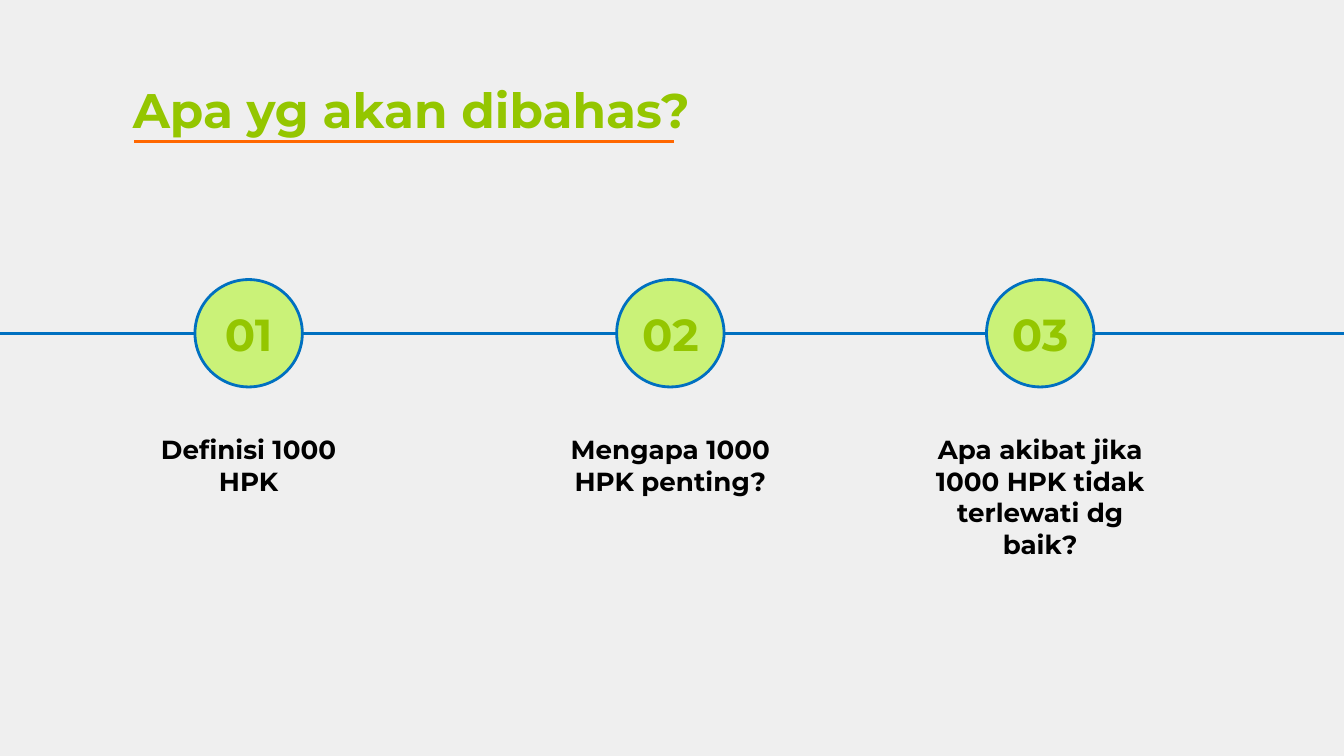
from dataclasses import dataclass

from lxml import etree
from pptx import Presentation
from pptx import util as u
from pptx.dml.color import RGBColor
from pptx.enum import shapes, text
from pptx.oxml.ns import qn


@dataclass(frozen=True)
class Theme:
    font: str = "Montserrat"
    background: str = "EFEFEF"
    accent: str = "94C600"
    badge: str = "CAF278"
    timeline: str = "0070C0"
    underline: str = "FF6700"
    body: str = "000000"
    title_size: int = 26
    number_size: int = 24
    topic_size: int = 14
    line_width: float = 1.5


THEME = Theme()
PAGE_WIDTH, PAGE_HEIGHT = 25.4, 14.29
TIMELINE_Y = 6.3
BADGE_SIZE = 2.03
COLUMN_WIDTH = 4.7

# Centre of each column in cm, with its topic
TOPICS = [
    (4.7, "Definisi 1000 HPK"),
    (12.67, "Mengapa 1000 HPK penting?"),
    (19.66, "Apa akibat jika 1000 HPK tidak terlewati dg baik?"),
]


def color(value):
    return RGBColor.from_string(value)


def add_line(page, left, right, top, line_color):
    line = page.shapes.add_connector(
        shapes.MSO_CONNECTOR.STRAIGHT,
        u.Cm(left), u.Cm(top), u.Cm(right), u.Cm(top))
    line.line.color.rgb = color(line_color)
    line.line.width = u.Pt(THEME.line_width)
    etree.SubElement(line._element.spPr, qn("a:effectLst"))


def add_badge(page, center):
    badge = page.shapes.add_shape(
        shapes.MSO_SHAPE.OVAL,
        u.Cm(center - BADGE_SIZE / 2), u.Cm(TIMELINE_Y - BADGE_SIZE / 2),
        u.Cm(BADGE_SIZE), u.Cm(BADGE_SIZE))
    badge.shadow.inherit = False
    badge.fill.solid()
    badge.fill.fore_color.rgb = color(THEME.badge)
    badge.line.color.rgb = color(THEME.timeline)
    badge.line.width = u.Pt(THEME.line_width)


def add_text(page, left, top, width, height, words, size, font_color,
             align=text.PP_ALIGN.CENTER, anchor=text.MSO_ANCHOR.TOP):
    box = page.shapes.add_textbox(
        u.Cm(left), u.Cm(top), u.Cm(width), u.Cm(height))
    frame = box.text_frame
    frame.word_wrap = True
    frame.vertical_anchor = anchor
    frame.margin_left = frame.margin_right = u.Cm(0.25)
    frame.margin_top = frame.margin_bottom = u.Cm(0.25)
    frame.text = words
    para = frame.paragraphs[0]
    para.alignment = align
    for span in para.runs:
        span.font.name = THEME.font
        span.font.size = u.Pt(size)
        span.font.bold = True
        span.font.color.rgb = color(font_color)


def add_topic(page, number, center, topic):
    left = center - COLUMN_WIDTH / 2
    add_badge(page, center)
    add_text(page, left, 5.61, COLUMN_WIDTH, 1.4, f"{number:02d}",
             THEME.number_size, THEME.accent, anchor=text.MSO_ANCHOR.MIDDLE)
    add_text(page, left, 7.95, COLUMN_WIDTH, 1.6, topic,
             THEME.topic_size, THEME.body)


def main():
    deck = Presentation()
    deck.slide_width, deck.slide_height = u.Cm(PAGE_WIDTH), u.Cm(PAGE_HEIGHT)
    page = deck.slides.add_slide(deck.slide_layouts[6])
    page.background.fill.solid()
    page.background.fill.fore_color.rgb = color(THEME.background)

    # Heading with its underline
    add_text(page, 2.26, 1.27, 20.85, 1.6, "Apa yg akan dibahas?",
             THEME.title_size, THEME.accent, align=text.PP_ALIGN.LEFT)
    add_line(page, 2.54, 12.73, 2.67, THEME.underline)

    # Timeline behind the numbered topics
    add_line(page, 0, PAGE_WIDTH, TIMELINE_Y, THEME.timeline)
    for number, (center, topic) in enumerate(TOPICS, start=1):
        add_topic(page, number, center, topic)

    deck.save("out.pptx")


if __name__ == "__main__":
    main()
